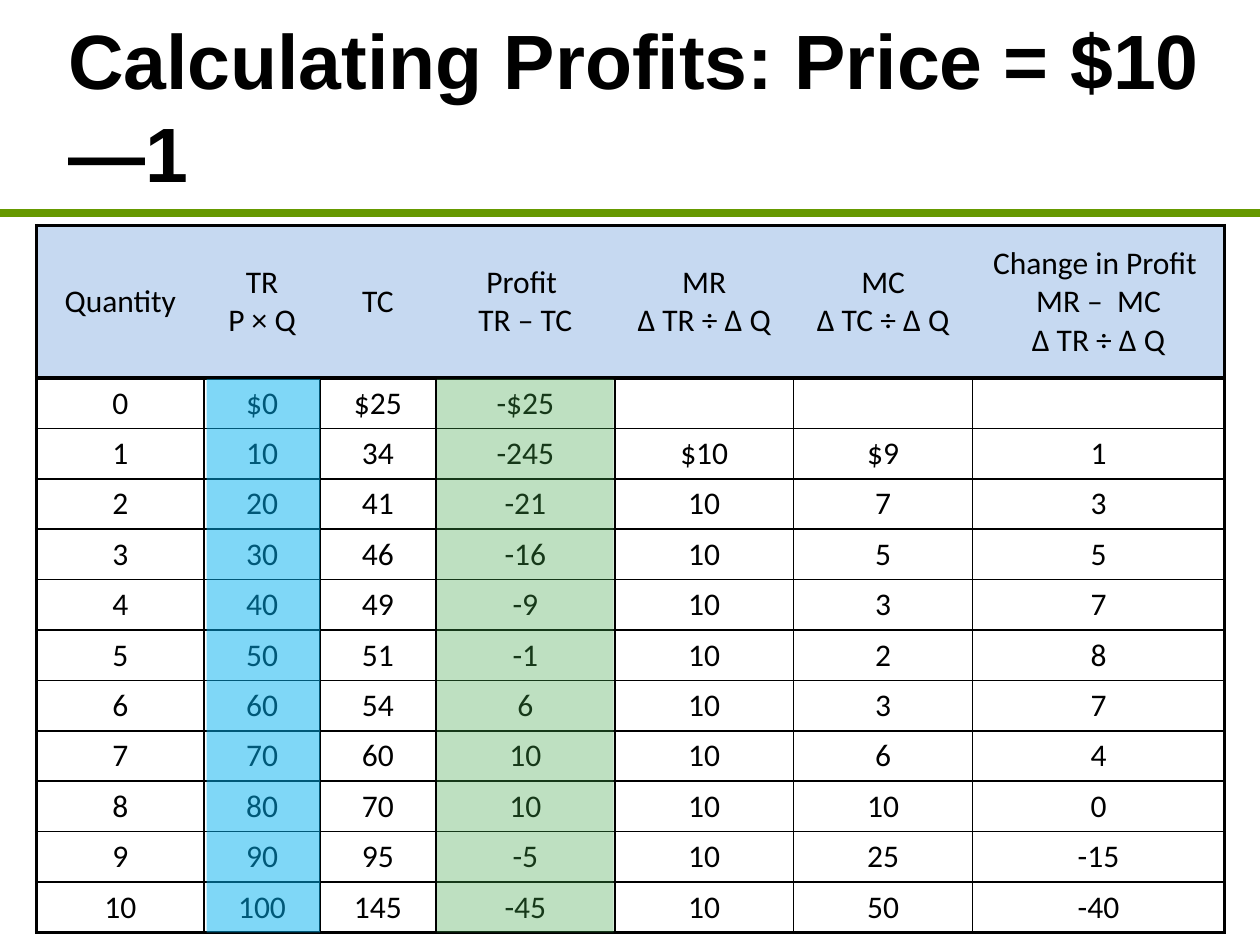
from lxml import etree
from pptx import Presentation
from pptx.dml.color import RGBColor
from pptx.enum import shapes, text
from pptx.oxml import ns
from pptx.util import Inches, Pt

TITLE = "Calculating Profits: Price = $10—1"
HEADERS = ["Quantity", "TR\nP × Q", "TC", "Profit \nTR – TC", "MR\nΔ TR ÷ Δ Q",
           "MC\nΔ TC ÷ Δ Q", "Change in Profit \nMR –  MC\nΔ TR ÷ Δ Q"]
ROWS = [
    ["0", "$0", "$25", "-$25", "", "", ""],
    ["1", "10", "34", "-245", "$10", "$9", "1"],
    ["2", "20", "41", "-21", "10", "7", "3"],
    ["3", "30", "46", "-16", "10", "5", "5"],
    ["4", "40", "49", "-9", "10", "3", "7"],
    ["5", "50", "51", "-1", "10", "2", "8"],
    ["6", "60", "54", "6", "10", "3", "7"],
    ["7", "70", "60", "10", "10", "6", "4"],
    ["8", "80", "70", "10", "10", "10", "0"],
    ["9", "90", "95", "-5", "10", "25", "-15"],
    ["10", "100", "145", "-45", "10", "50", "-40"],
]
COL_WIDTHS = [1.33, 0.92, 0.92, 1.42, 1.42, 1.42, 2]
HEADER_H, ROW_H = 1.21, 0.4
LEFT, TOP = 0.29, 1.79
HIGHLIGHTS = [(1.64, 0.9, "00B0F0", 50), (3.47, 1.4, "43A64A", 34)]
HIGHLIGHT_TOP, HIGHLIGHT_H = 3.01, 4.39
NO_STYLE = "{2D5ABB26-0587-4C30-8999-92F81FD0307C}"
THICK, THIN = 2.25, 1
TITLE_FONT = {"name": "Arial", "size": Pt(44), "bold": True}
CELL_FONT = {"name": "Calibri", "size": Pt(18), "bold": False}
CELL_FORMAT = {"margin_left": Inches(0.06), "margin_right": Inches(0.06),
               "margin_top": 0, "margin_bottom": 0,
               "vertical_anchor": text.MSO_ANCHOR.MIDDLE}


def rgb(color):
    return RGBColor.from_string(color)


def apply(target, values):
    for name, value in values.items():
        setattr(target, name, value)


def style_font(font, values):
    apply(font, values)
    font.color.rgb = rgb("000000")


def fill(target, color):
    target.fill.solid()
    target.fill.fore_color.rgb = rgb(color)


def border(cell, side, width):
    ln = etree.SubElement(cell._tc.get_or_add_tcPr(), ns.qn(f"a:ln{side}"), w=str(Pt(width)))
    solid = etree.SubElement(ln, ns.qn("a:solidFill"))
    etree.SubElement(solid, ns.qn("a:srgbClr"), val="000000")


def add_borders(cell, row, col):
    last_row, last_col = len(ROWS), len(COL_WIDTHS) - 1
    inner = THIN if row else None
    widths = {
        "L": THICK if col == 0 else inner,
        "R": THICK if col == last_col else inner,
        "T": THICK if row <= 1 else THIN,
        "B": THICK if row in (0, last_row) else THIN,
    }
    for side, width in widths.items():
        if width:
            border(cell, side, width)


def add_title(s):
    sp = s.shapes.title
    apply(sp, {"left": Inches(0.44), "top": 0, "width": Inches(9.21), "height": Inches(1.67)})
    tf = sp.text_frame
    apply(tf, {"word_wrap": True, "auto_size": text.MSO_AUTO_SIZE.NONE,
               "vertical_anchor": text.MSO_ANCHOR.MIDDLE})
    p = tf.paragraphs[0]
    p.alignment = text.PP_ALIGN.LEFT
    r = p.add_run()
    r.text = TITLE
    style_font(r.font, TITLE_FONT)


def add_rule(s):
    line = s.shapes.add_connector(shapes.MSO_CONNECTOR.STRAIGHT, 0, Inches(1.69),
                                  Inches(10), Inches(1.69))
    line.line.color.rgb = rgb("669900")
    line.line.width = Pt(4.5)
    etree.SubElement(line._element.spPr, ns.qn("a:effectLst"))


def add_profit_table(s):
    data = [HEADERS] + ROWS
    height = HEADER_H + ROW_H * len(ROWS)
    table = s.shapes.add_table(len(data), len(COL_WIDTHS), Inches(LEFT), Inches(TOP),
                               Inches(sum(COL_WIDTHS)), Inches(height)).table
    apply(table, {"first_row": False, "horz_banding": False})
    table._tbl.tblPr.find(ns.qn("a:tableStyleId")).text = NO_STYLE
    for column, width in zip(table.columns, COL_WIDTHS):
        column.width = Inches(width)
    for i, values in enumerate(data):
        table.rows[i].height = Inches(ROW_H if i else HEADER_H)
        for j, value in enumerate(values):
            cell = table.cell(i, j)
            cell.text = value
            apply(cell, CELL_FORMAT)
            add_borders(cell, i, j)
            if i == 0:
                fill(cell, "C6D9F1")
            else:
                cell.fill.background()
            for p in cell.text_frame.paragraphs:
                p.alignment = text.PP_ALIGN.CENTER
                style_font(p.font, CELL_FONT)
                for r in p.runs:
                    style_font(r.font, CELL_FONT)


def add_highlights(s):
    for left, width, color, opacity in HIGHLIGHTS:
        sp = s.shapes.add_shape(shapes.MSO_SHAPE.RECTANGLE, Inches(left), Inches(HIGHLIGHT_TOP),
                                Inches(width), Inches(HIGHLIGHT_H))
        fill(sp, color)
        sp.line.fill.background()
        sp.shadow.inherit = False
        clr = sp._element.spPr.find(".//" + ns.qn("a:srgbClr"))
        etree.SubElement(clr, ns.qn("a:alpha"), val=str(opacity * 1000))


def main():
    prs = Presentation()
    apply(prs, {"slide_width": Inches(10), "slide_height": Inches(7.5)})
    s = prs.slides.add_slide(prs.slide_layouts[5])
    add_rule(s)
    add_title(s)
    add_profit_table(s)
    add_highlights(s)
    prs.save("out.pptx")


if __name__ == "__main__":
    main()
